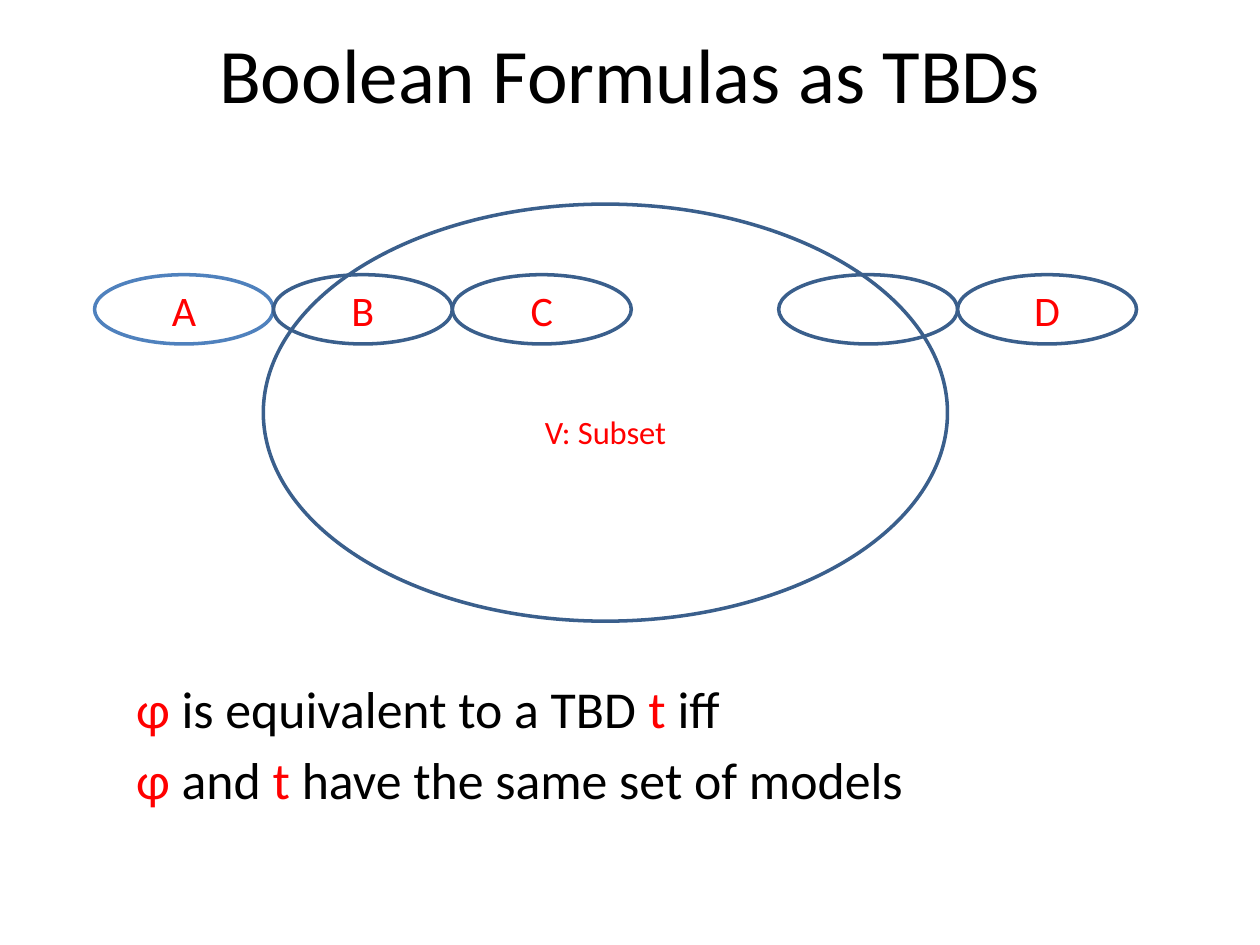
import pptx
import pptx.util
import pptx.dml.color
import pptx.enum.shapes
import pptx.enum.text
import pptx.oxml.ns
import lxml.etree
from pptx.util import Inches

RGB = pptx.dml.color.RGBColor.from_string
ALIGN = pptx.enum.text.PP_ALIGN
THEME = {
    "font": "Calibri", "text": RGB("000000"), "accent": RGB("FF0000"),
    "fill": RGB("FFFFFF"), "line": RGB("3A5F8C"), "first_line": RGB("4F81BD"),
    "title": 44, "body": 29.6, "label": 24, "subset": 32,
}


def add_run(p, text, size, color):
    r = p.add_run()
    r.text = text
    r.font.name = THEME["font"]
    r.font.size = pptx.util.Pt(size)
    r.font.color.rgb = color
    return r


def add_ellipse(s, left, top, width, height, line):
    sp = s.shapes.add_shape(pptx.enum.shapes.MSO_SHAPE.OVAL, Inches(left),
                            Inches(top), Inches(width), Inches(height))
    sp.shadow.inherit = False
    sp.line.color.rgb = line
    sp.line.width = pptx.util.Pt(2)
    tf = sp.text_frame
    tf.word_wrap = True
    tf.vertical_anchor = pptx.enum.text.MSO_ANCHOR.MIDDLE
    tf.paragraphs[0].alignment = ALIGN.CENTER
    return sp


prs = pptx.Presentation()
prs.slide_width, prs.slide_height = Inches(10), Inches(7.5)
s = prs.slides.add_slide(prs.slide_layouts[1])
title, body = s.placeholders

for sp, box in ((title, (0.5, 0, 9, 1.15)), (body, (0.98, 5.32, 8.27, 1.02))):
    sp.left, sp.top, sp.width, sp.height = map(Inches, box)
    sp.text_frame.auto_size = pptx.enum.text.MSO_AUTO_SIZE.NONE

title.text_frame.vertical_anchor = pptx.enum.text.MSO_ANCHOR.MIDDLE
p = title.text_frame.paragraphs[0]
p.alignment = ALIGN.CENTER
add_run(p, "Boolean Formulas as TBDs", THEME["title"], THEME["text"])

width = 1.42
for start, labels in ((0.75, ["A", "B", "C"]), (6.18, ["", "D"])):
    for i, label in enumerate(labels):
        line = THEME["first_line"] if label == "A" else THEME["line"]
        sp = add_ellipse(s, start + i * width, 2.18, width, 0.55, line)
        sp.fill.solid()
        sp.fill.fore_color.rgb = THEME["fill"]
        if label:
            add_run(sp.text_frame.paragraphs[0], label, THEME["label"], THEME["accent"])

subset = add_ellipse(s, 2.09, 1.62, 5.43, 3.31, THEME["line"])
subset.fill.background()
r = add_run(subset.text_frame.paragraphs[0], "V: Subset", THEME["subset"], THEME["accent"])
r._r.get_or_add_rPr().set("baseline", "-25000")

statements = [
    [("φ", "accent"), (" is equivalent to a TBD ", "text"), ("t ", "accent"), ("iff", "text")],
    [("φ", "accent"), (" and ", "text"), ("t ", "accent"),
     ("have the same set of models", "text")],
]
tf = body.text_frame
for i, runs in enumerate(statements):
    p = tf.add_paragraph() if i else tf.paragraphs[0]
    p.space_before = pptx.util.Pt(5 if i else 0)
    pPr = p._p.get_or_add_pPr()
    pPr.set("marL", str(Inches(0.38)))
    pPr.set("indent", str(-Inches(0.38)))
    lxml.etree.SubElement(pPr, pptx.oxml.ns.qn("a:buNone"))
    for text, color in runs:
        add_run(p, text, THEME["body"], THEME[color])

prs.save("out.pptx")
